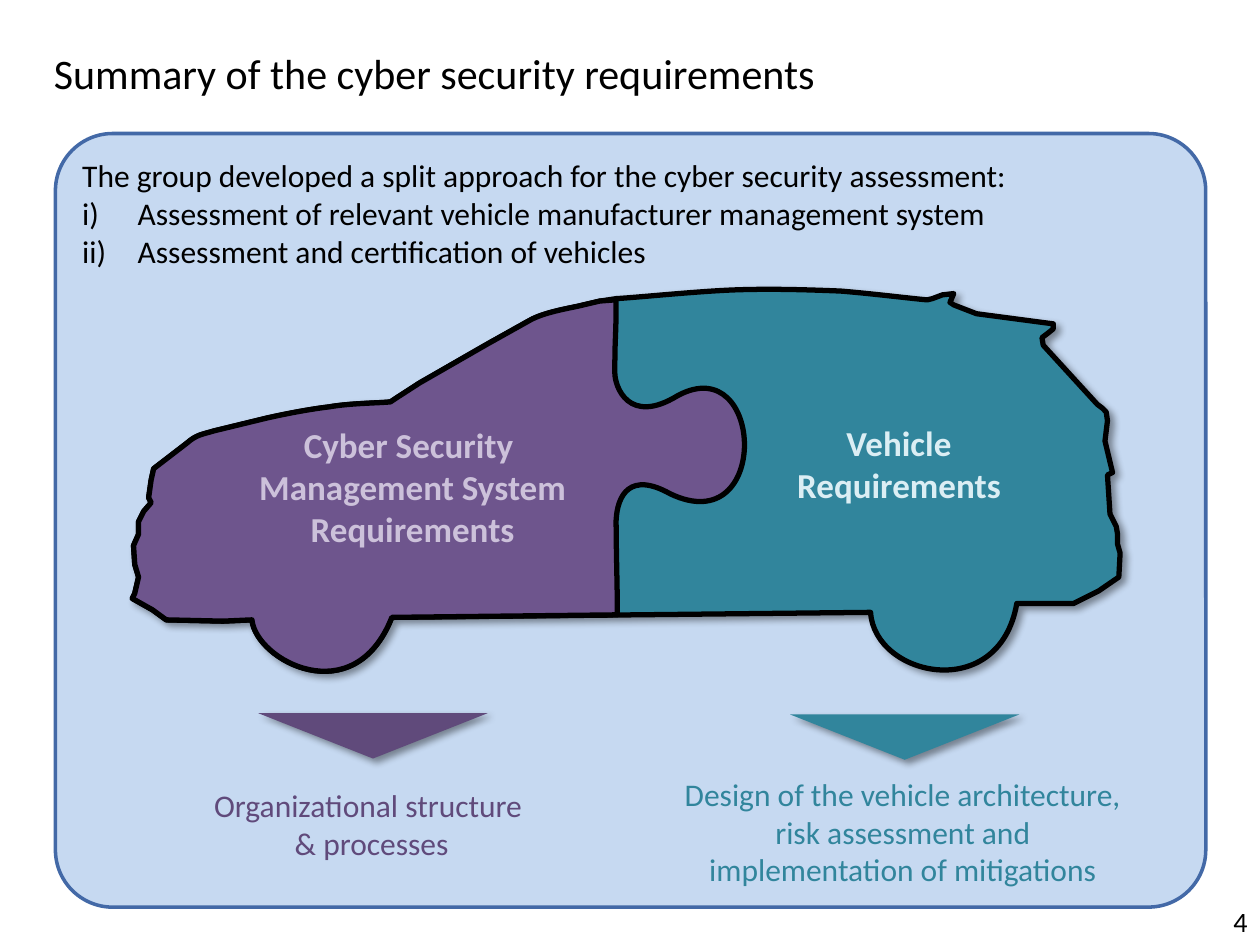
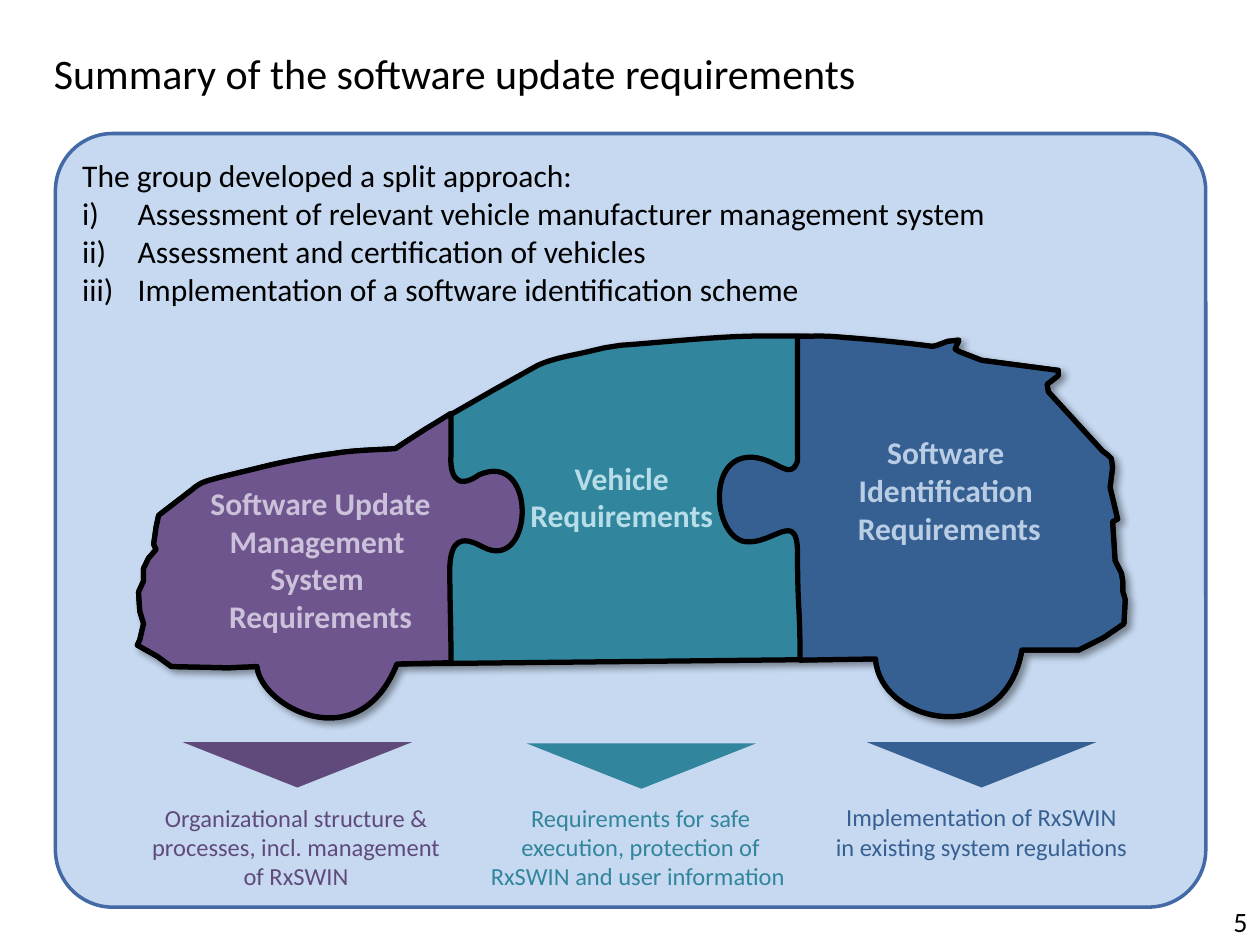
import dataclasses

import lxml.etree
import pptx
import pptx.dml.color
import pptx.enum.shapes
import pptx.enum.text
import pptx.oxml.ns
import pptx.presentation
import pptx.shapes.autoshape
import pptx.slide
import pptx.text.text
import pptx.util

Shape = pptx.shapes.autoshape.Shape
Outline = list[tuple[float, ...]]
Align = pptx.enum.text.PP_ALIGN
Preset = pptx.enum.shapes.MSO_SHAPE
qn = pptx.oxml.ns.qn

BLACK, PANEL, PANEL_EDGE = "000000", "C6D9F1", "4369A7"
TEAL, PURPLE, DARK_PURPLE, BLUE = "31859C", "6E558D", "604A7B", "376092"
LILAC, ICE, AQUA, SKY = "CCC1DA", "DBEEF4", "B7DEE8", "B9CDE5"
CURVE_STEPS = 16
UNITS_PER_INCH = 10000

TAIL: Outline = [
    (8.81, 4.08), (8.79, 3.77), (8.83, 3.75), (8.77, 3.5), (8.79, 3.34), (8.78, 3.27),
    (8.75, 3.24), (8.71, 3.21), (8.28, 2.74), (8.27, 2.68), (8.31, 2.65), (8.36, 2.61),
    (8.36, 2.57), (8.28, 2.56), (7.75, 2.49), (7.57, 2.42), (7.54, 2.4), (7.57, 2.33),
    (7.48, 2.34), (7.4, 2.37), (7.36, 2.38),
]
ROOF: Outline = [
    (7.24, 2.37, 6.92, 2.33, 6.67, 2.31), (6.42, 2.3, 6.14, 2.29, 5.85, 2.3),
    (5.55, 2.31, 5.07, 2.36, 4.89, 2.37),
]
WINDSCREEN: Outline = [
    (4.76, 2.39), (4.59, 2.43), (4.5, 2.45, 4.32, 2.48, 4.21, 2.54), (3.87, 2.73),
]
NOSE: Outline = [
    (3.33, 3.04), (3.16, 3.15), (3.1, 3.19), (3.01, 3.2, 2.78, 3.2, 2.61, 3.23),
    (2.44, 3.25, 2.19, 3.3, 2.07, 3.33), (1.7, 3.42), (1.6, 3.45, 1.56, 3.45, 1.48, 3.52),
    (1.22, 3.72), (1.2, 3.81), (1.18, 3.95), (1.2, 3.99), (1.14, 4.06), (1.1, 4.14),
    (1.1, 4.24), (1.06, 4.33), (1.07, 4.48), (1.1, 4.58), (1.07, 4.71), (1.05, 4.75),
    (1.21, 4.84), (1.32, 4.92), (1.77, 4.93), (2, 4.92), (2.03, 5.24, 2.81, 5.66, 3.11, 4.9),
]
REAR_WHEEL: Outline = [
    (6.91, 4.86), (6.94, 5.37, 7.93, 5.59, 8.07, 4.79), (8.52, 4.79), (8.72, 4.69),
    (8.88, 4.58), (8.89, 4.39), (8.87, 4.32), (8.87, 4.24), (8.86, 4.18), (8.84, 4.14),
]
MIDDLE_SEAM: Outline = [
    (3.11, 4.9), (4.9, 4.88), (4.9, 4.64, 4.89, 4.38, 4.89, 4.13),
    (4.9, 3.93, 5, 3.74, 5.32, 3.92), (6.12, 4.3, 6.07, 2.77, 5.38, 3.14),
    (4.99, 3.38, 4.88, 3.07, 4.88, 2.96), (4.88, 2.64, 4.89, 2.7, 4.89, 2.38),
]
FRONT_SEAM: Outline = [
    (3.11, 4.9), (3.54, 4.89), (3.54, 4.61, 3.53, 4.41, 3.53, 4.13),
    (3.54, 3.93, 3.61, 3.87, 3.79, 3.97), (4.2, 4.19, 4.23, 3.19, 3.76, 3.4),
    (3.56, 3.54, 3.53, 3.36, 3.54, 3.24), (3.54, 3.13, 3.54, 3.02, 3.54, 2.91),
]
REAR_SEAM: Outline = [
    (7.24, 2.36, 6.84, 2.32, 6.67, 2.31), (6.49, 2.29, 6.43, 2.3, 6.29, 2.3),
    (6.29, 2.63, 6.29, 2.96, 6.29, 3.29), (6.23, 3.45, 6.14, 3.28, 5.94, 3.26),
    (5.56, 3.23, 5.62, 3.9, 5.88, 3.93), (6.1, 3.95, 6.29, 3.67, 6.29, 4.02),
    (6.29, 4.48, 6.31, 4.42, 6.31, 4.87),
]
BODY = TAIL + ROOF + WINDSCREEN + NOSE + REAR_WHEEL


@dataclasses.dataclass(frozen=True)
class Box:
    left: float
    top: float
    width: float
    height: float


@dataclasses.dataclass(frozen=True)
class Label:
    box: Box
    paras: list[str]
    size: int
    colour: str
    bold: bool = False
    align: Align = Align.CENTER
    wrap: bool = True


@dataclasses.dataclass(frozen=True)
class Piece:
    outline: Outline
    fill: str
    shadow: bool = False


@dataclasses.dataclass(frozen=True)
class Arrow:
    left: float
    top: float
    fill: str


@dataclasses.dataclass(frozen=True)
class Summary:
    number: int
    title: str
    intro: str
    steps: list[str]
    car_shift: tuple[float, float]
    pieces: list[Piece]
    arrows: list[Arrow]
    arrow_shadow: bool
    labels: list[Label]


SUMMARIES = [
    Summary(
        4,
        "Summary of the cyber security requirements",
        "The group developed a split approach for the cyber security assessment:",
        ["Assessment of relevant vehicle manufacturer management system",
         "Assessment and certification of vehicles"],
        (0, 0),
        [Piece(BODY, TEAL, True), Piece(MIDDLE_SEAM + WINDSCREEN + NOSE, PURPLE)],
        [Arrow(2.05, 5.66, DARK_PURPLE), Arrow(6.27, 5.67, TEAL)],
        True,
        [Label(Box(1.71, 3.31, 3.13, 1.11),
               ["Cyber Security \nManagement System Requirements"], 20, LILAC, True),
         Label(Box(5.57, 3.3, 3.13, 0.77), ["Vehicle\nRequirements"], 20, ICE, True),
         Label(Box(1.45, 6.19, 3, 0.71),
               ["Organizational structure \n& processes"], 18, DARK_PURPLE),
         Label(Box(5.26, 6.1, 3.81, 1.01),
               ["Design of the vehicle architecture, risk assessment and "
                "implementation of mitigations"], 18, TEAL)],
    ),
    Summary(
        5,
        "Summary of the software update requirements",
        "The group developed a split approach:",
        ["Assessment of relevant vehicle manufacturer management system",
         "Assessment and certification of vehicles",
         "Implementation of a software identification scheme"],
        (0.04, 0.37),
        [Piece(BODY, TEAL, True), Piece(FRONT_SEAM + NOSE, PURPLE),
         Piece(TAIL + REAR_SEAM + REAR_WHEEL, BLUE)],
        [Arrow(1.45, 5.89, DARK_PURPLE), Arrow(4.18, 5.9, TEAL), Arrow(6.88, 5.89, BLUE)],
        False,
        [Label(Box(0.98, 3.79, 3.13, 1.31),
               ["Software Update\nManagement \nSystem \nRequirements"], 18, LILAC, True),
         Label(Box(5.97, 3.39, 3.13, 1.01),
               ["Software \nIdentification \nRequirements"], 18, SKY, True),
         Label(Box(3.37, 3.59, 3.13, 0.71), ["Vehicle", "Requirements"], 18, AQUA, True),
         Label(Box(1.01, 6.32, 2.68, 0.81),
               ["Organizational structure & processes, incl. management of RxSWIN"],
               14, DARK_PURPLE),
         Label(Box(3.76, 6.32, 2.65, 0.81),
               ["Requirements for safe execution, protection of RxSWIN and user information "],
               14, TEAL),
         Label(Box(6.52, 6.32, 2.54, 0.57),
               ["Implementation of RxSWIN", "in existing system regulations"],
               14, BLUE, wrap=False)],
    ),
]


def length(inches: float) -> pptx.util.Length:
    return pptx.util.Cm(inches * 2.54)


def place(box: Box) -> list[pptx.util.Length]:
    return [length(value) for value in dataclasses.astuple(box)]


def rgb(colour: str) -> pptx.dml.color.RGBColor:
    return pptx.dml.color.RGBColor.from_string(colour)


def set_values(target: object, values: dict[str, object]) -> None:
    for name, value in values.items():
        setattr(target, name, value)


def add_spans(para: pptx.text.text._Paragraph, text: str, size: int, colour: str,
              bold: bool = False) -> None:
    for index, line in enumerate(text.split("\n")):
        if index:
            para.add_line_break()
        span = para.add_run()
        span.text = line
        set_values(span.font, {"name": "Calibri", "size": pptx.util.Pt(size), "bold": bold})
        span.font.color.rgb = rgb(colour)


def style_shape(shape: Shape, fill: str, line: str | None = None, width: float = 0,
                shadow: bool = False) -> None:
    shape.fill.solid()
    shape.fill.fore_color.rgb = rgb(fill)
    if line:
        shape.line.color.rgb = rgb(line)
        shape.line.width = pptx.util.Pt(width)
    else:
        shape.line.fill.background()
    shape.shadow.inherit = False
    if shadow:
        effects = shape._element.spPr.find(qn("a:effectLst"))
        outer = lxml.etree.SubElement(
            effects, qn("a:outerShdw"), blurRad=str(pptx.util.Pt(4)),
            dist=str(pptx.util.Pt(3)), dir="2700000", algn="tl", rotWithShape="0")
        tint = lxml.etree.SubElement(outer, qn("a:srgbClr"), val=BLACK)
        lxml.etree.SubElement(tint, qn("a:alpha"), val="40000")


def add_label(page: pptx.slide.Slide, label: Label) -> None:
    frame = page.shapes.add_textbox(*place(label.box)).text_frame
    set_values(frame, {"word_wrap": label.wrap,
                       "auto_size": pptx.enum.text.MSO_AUTO_SIZE.SHAPE_TO_FIT_TEXT})
    for index, text in enumerate(label.paras):
        para = frame.add_paragraph() if index else frame.paragraphs[0]
        para.alignment = label.align
        add_spans(para, text, label.size, label.colour, label.bold)


def add_panel(page: pptx.slide.Slide, intro: str, steps: list[str]) -> None:
    panel = page.shapes.add_shape(Preset.ROUNDED_RECTANGLE, *place(Box(0.44, 1.06, 9.13, 6.14)))
    panel.adjustments[0] = 0.074
    style_shape(panel, PANEL, PANEL_EDGE, 2)
    frame = panel.text_frame
    set_values(frame, {
        "word_wrap": True, "vertical_anchor": pptx.enum.text.MSO_ANCHOR.TOP,
        "margin_left": length(0.08), "margin_right": 0,
        "margin_top": length(0.05), "margin_bottom": length(0.05),
    })
    for index, text in enumerate([intro, *steps]):
        para = frame.add_paragraph() if index else frame.paragraphs[0]
        set_values(para, {"alignment": Align.LEFT, "level": 4})
        add_spans(para, text, 18, BLACK)
        indent = length(0.44) if index else 0
        settings = para._p.get_or_add_pPr()
        settings.set("marL", str(indent))
        settings.set("indent", str(-indent))
        if index:
            lxml.etree.SubElement(settings, qn("a:buAutoNum"), type="romanLcParenR")


def corners_of(segment: tuple[float, ...]) -> list[tuple[float, ...]]:
    return [segment[index:index + 2] for index in range(0, len(segment), 2)]


def flatten(outline: Outline) -> Outline:
    points = [outline[0]]
    for segment in outline[1:]:
        if len(segment) == 2:
            points.append(segment)
            continue
        corners = [points[-1], *corners_of(segment)]
        for step in range(1, CURVE_STEPS + 1):
            t = step / CURVE_STEPS
            weights = ((1 - t) ** 3, 3 * t * (1 - t) ** 2, 3 * t ** 2 * (1 - t), t ** 3)
            points.append(tuple(
                sum(weight * corner[axis] for weight, corner in zip(weights, corners))
                for axis in (0, 1)))
    return points


def add_piece(page: pptx.slide.Slide, piece: Piece, shift: tuple[float, float]) -> None:
    outline = [tuple((value + shift[index % 2]) * UNITS_PER_INCH
                     for index, value in enumerate(segment)) for segment in piece.outline]
    points = flatten(outline)
    builder = page.shapes.build_freeform(*points[0], scale=length(1) / UNITS_PER_INCH)
    builder.add_line_segments(points[1:], close=True)
    shape = builder.convert_to_shape()
    origin = [min(values) for values in zip(*points)]
    track = next(shape._element.iter(qn("a:path")))
    for child in list(track):
        track.remove(child)
    for index, segment in enumerate(outline):
        kind = "a:moveTo" if not index else "a:lnTo" if len(segment) == 2 else "a:cubicBezTo"
        step = lxml.etree.SubElement(track, qn(kind))
        for x, y in corners_of(segment):
            lxml.etree.SubElement(step, qn("a:pt"), x=str(round(x - origin[0])),
                                  y=str(round(y - origin[1])))
    lxml.etree.SubElement(track, qn("a:close"))
    style_shape(shape, piece.fill, BLACK, 3, piece.shadow)


def add_arrow(page: pptx.slide.Slide, arrow: Arrow, shadow: bool) -> None:
    box = Box(arrow.left, arrow.top, 1.82, 0.36)
    shape = page.shapes.add_shape(Preset.ISOSCELES_TRIANGLE, *place(box))
    shape.rotation = 180
    style_shape(shape, arrow.fill, shadow=shadow)


def add_summary(deck: pptx.presentation.Presentation, summary: Summary) -> None:
    page = deck.slides.add_slide(deck.slide_layouts[6])
    add_label(page, Label(Box(8.33, 7.13, 1.67, 0.37), [str(summary.number)], 16, BLACK,
                          align=Align.RIGHT))
    add_panel(page, summary.intro, summary.steps)
    add_label(page, Label(Box(0.33, 0.33, 9.17, 0.5), [summary.title], 24, BLACK,
                          align=Align.LEFT))
    for piece in summary.pieces:
        add_piece(page, piece, summary.car_shift)
    for arrow in summary.arrows:
        add_arrow(page, arrow, summary.arrow_shadow)
    for label in summary.labels:
        add_label(page, label)


def main() -> None:
    deck = pptx.Presentation()
    set_values(deck, {"slide_width": length(10), "slide_height": length(7.5)})
    for summary in SUMMARIES:
        add_summary(deck, summary)
    deck.save("out.pptx")


if __name__ == "__main__":
    main()
